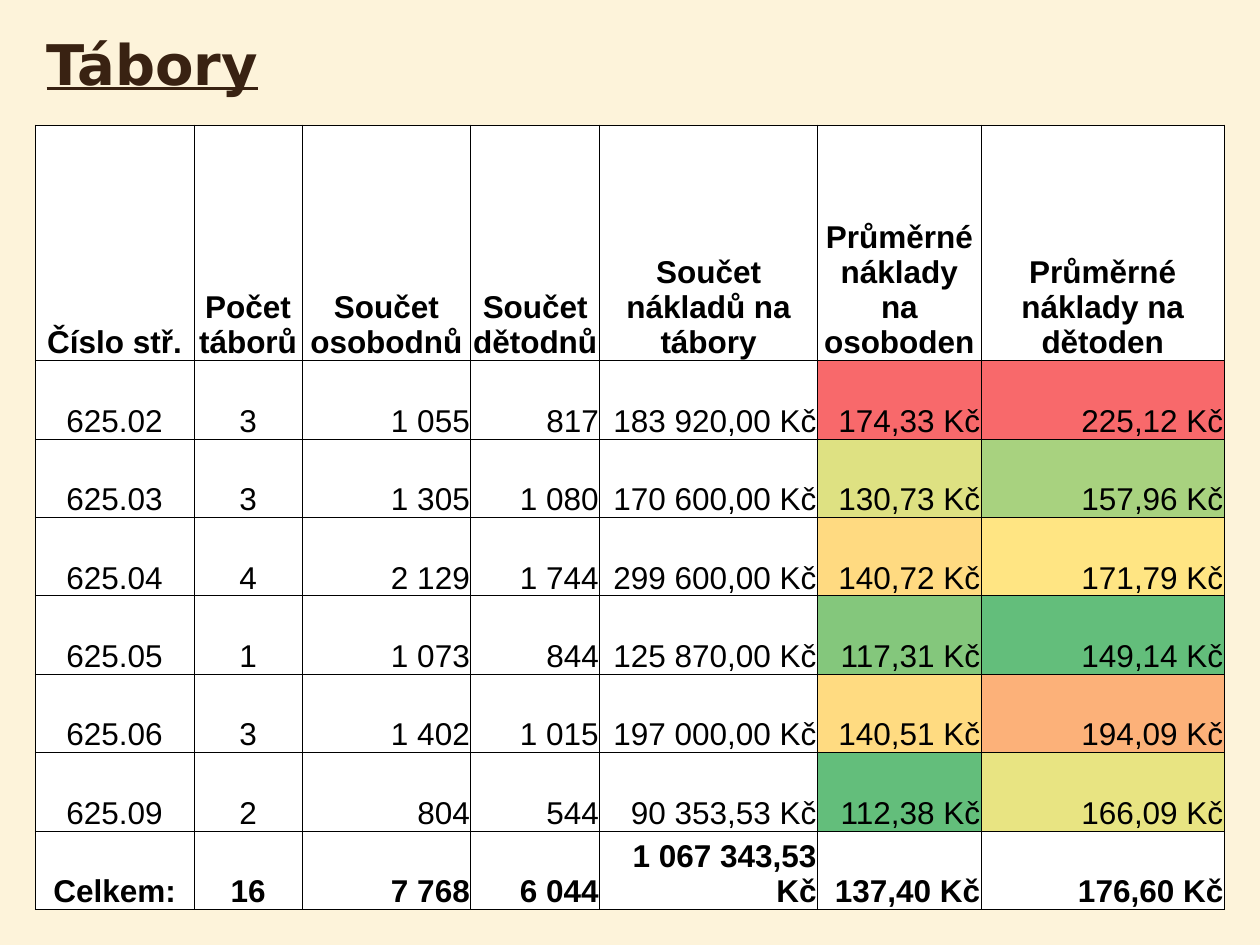
from lxml.etree import SubElement
from pptx import Presentation
from pptx.dml.color import RGBColor
from pptx.enum.text import MSO_ANCHOR as Anchor, MSO_AUTO_SIZE as AutoSize, PP_ALIGN as Align
from pptx.oxml.ns import qn
from pptx.util import Cm, Pt

COLOURS = {
    "background": "FDF3DA",
    "title": "392212",
    "text": "000000",
    "border": "000000",
    "cell": "FFFFFF",
}
COLUMN_WIDTHS = [3.2, 2.18, 3.4, 2.6, 4.39, 3.3, 4.9]
HEADER_HEIGHT, ROW_HEIGHT = 4.75, 1.58
CENTRED_COLUMNS = 2

HEADER = ["Číslo stř.", "Počet\vtáborů", "Součet\vosobodnů", "Součet\vdětodnů",
          "Součet nákladů na tábory", "Průměrné náklady na osoboden",
          "Průměrné náklady na dětoden"]
CAMPS = [
    ["625.02", "3", "1 055", "817", "183 920,00 Kč", "174,33 Kč", "225,12 Kč"],
    ["625.03", "3", "1 305", "1 080", "170 600,00 Kč", "130,73 Kč", "157,96 Kč"],
    ["625.04", "4", "2 129", "1 744", "299 600,00 Kč", "140,72 Kč", "171,79 Kč"],
    ["625.05", "1", "1 073", "844", "125 870,00 Kč", "117,31 Kč", "149,14 Kč"],
    ["625.06", "3", "1 402", "1 015", "197 000,00 Kč", "140,51 Kč", "194,09 Kč"],
    ["625.09", "2", "804", "544", "90 353,53 Kč", "112,38 Kč", "166,09 Kč"],
]
TOTAL = ["Celkem:", "16", "7 768", "6 044", "1 067 343,53 Kč", "137,40 Kč", "176,60 Kč"]
# Colour scale of the last two columns, one pair for each camp
COST_FILLS = [
    ("F8696B", "F8696B"),
    ("DEE182", "A8D27F"),
    ("FFDA81", "FFE583"),
    ("84C77C", "63BE7B"),
    ("FFDB81", "FCB179"),
    ("63BE7B", "E8E482"),
]


def rgb(value):
    return RGBColor.from_string(value)


def set_font(para, name, size, colour, bold):
    font = para.font
    font.name, font.size, font.bold = name, Pt(size), bold
    font.color.rgb = rgb(colour)


def add_borders(cell):
    properties = cell._tc.get_or_add_tcPr()
    for side in ("a:lnL", "a:lnR", "a:lnT", "a:lnB"):
        line = SubElement(properties, qn(side), w=str(Pt(0.5)))
        fill = SubElement(line, qn("a:solidFill"))
        SubElement(fill, qn("a:srgbClr"), val=COLOURS["border"])


def fill_cell(cell, text, align, bold, fill):
    cell.text = text
    cell.vertical_anchor = Anchor.BOTTOM
    cell.margin_left = cell.margin_right = cell.margin_top = Cm(0.02)
    cell.margin_bottom = 0
    add_borders(cell)
    cell.fill.solid()
    cell.fill.fore_color.rgb = rgb(fill)
    para = cell.text_frame.paragraphs[0]
    para.alignment = align
    set_font(para, "Arial", 18, COLOURS["text"], bold)


def add_title(page, left, top, width, height):
    box = page.shapes.add_textbox(Cm(left), Cm(top), Cm(width), Cm(height))
    frame = box.text_frame
    frame.word_wrap = False
    frame.auto_size = AutoSize.SHAPE_TO_FIT_TEXT
    para = frame.paragraphs[0]
    para.text = "Tábory"
    set_font(para, "DejaVu Sans", 32, COLOURS["title"], True)
    para.font.underline = True


def add_camp_table(page, left, top):
    rows = [HEADER, *CAMPS, TOTAL]
    heights = [HEADER_HEIGHT] + [ROW_HEIGHT] * (len(rows) - 1)
    table = page.shapes.add_table(
        len(rows), len(HEADER), Cm(left), Cm(top),
        Cm(sum(COLUMN_WIDTHS)), Cm(sum(heights))).table
    table.first_row = table.horz_banding = False
    for column, width in zip(table.columns, COLUMN_WIDTHS):
        column.width = Cm(width)
    for r, (texts, height) in enumerate(zip(rows, heights)):
        table.rows[r].height = Cm(height)
        is_camp = 0 < r < len(rows) - 1
        fills = [COLOURS["cell"]] * len(texts)
        if is_camp:
            fills[-2:] = COST_FILLS[r - 1]
        for c, (text, fill) in enumerate(zip(texts, fills)):
            centred = r == 0 or c < CENTRED_COLUMNS
            align = Align.CENTER if centred else Align.RIGHT
            fill_cell(table.cell(r, c), text, align, not is_camp, fill)


def main():
    deck = Presentation()
    deck.slide_width, deck.slide_height = Cm(25.4), Cm(19.05)
    page = deck.slides.add_slide(deck.slide_layouts[6])
    page.background.fill.solid()
    page.background.fill.fore_color.rgb = rgb(COLOURS["background"])
    add_title(page, 0.69, 0.48, 4.95, 1.63)
    add_camp_table(page, 0.71, 2.52)
    deck.save("out.pptx")


if __name__ == "__main__":
    main()
